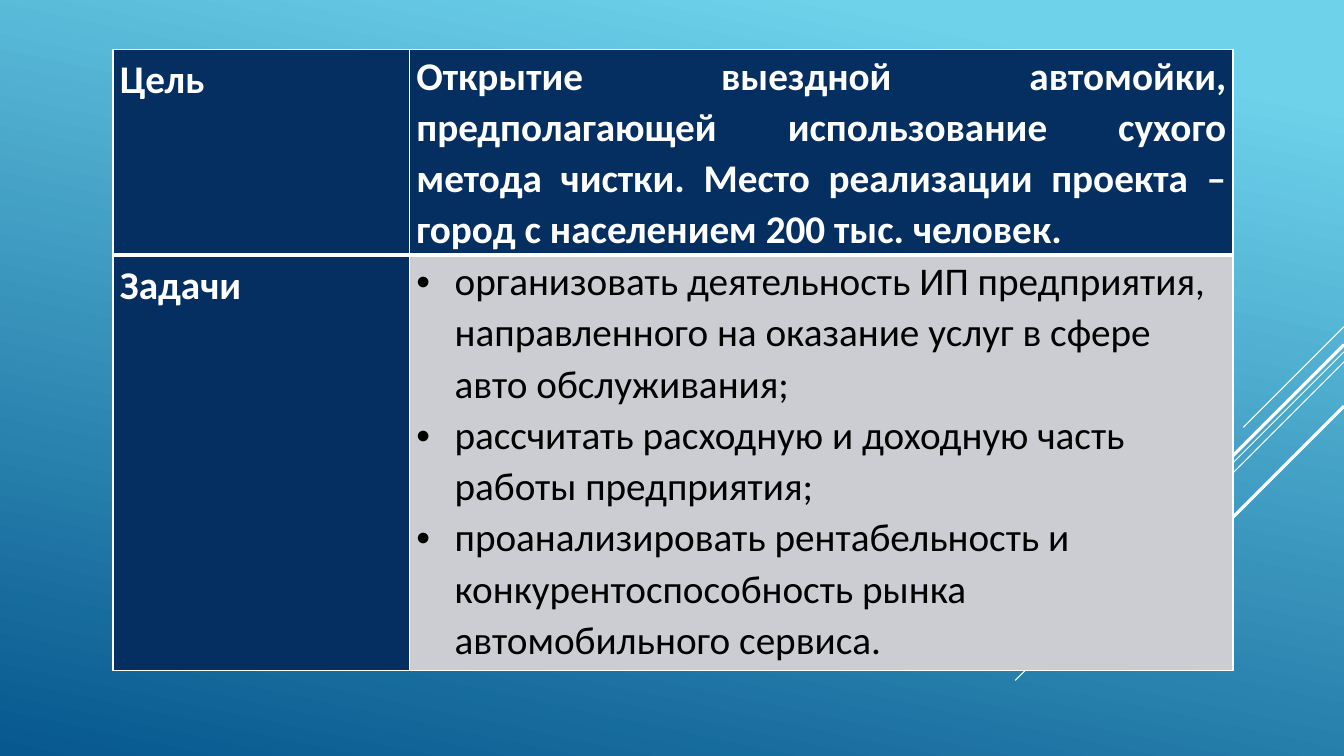
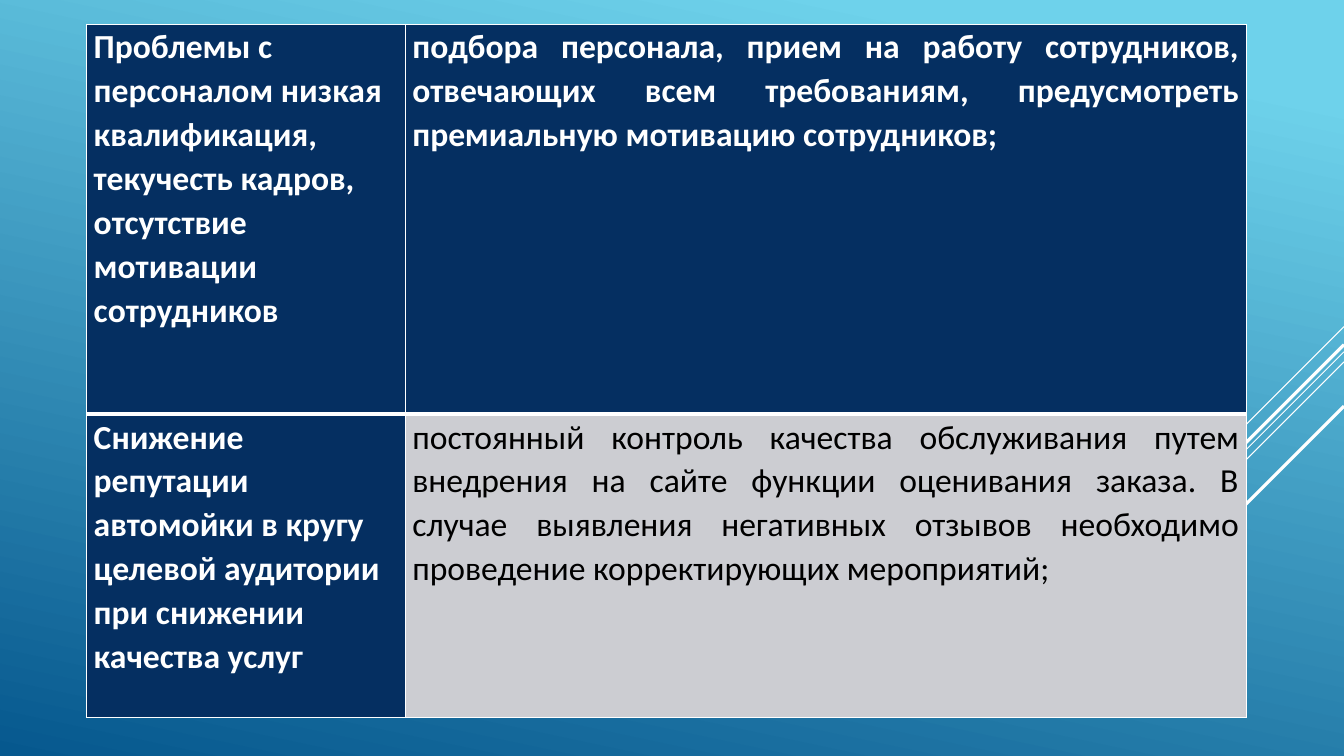
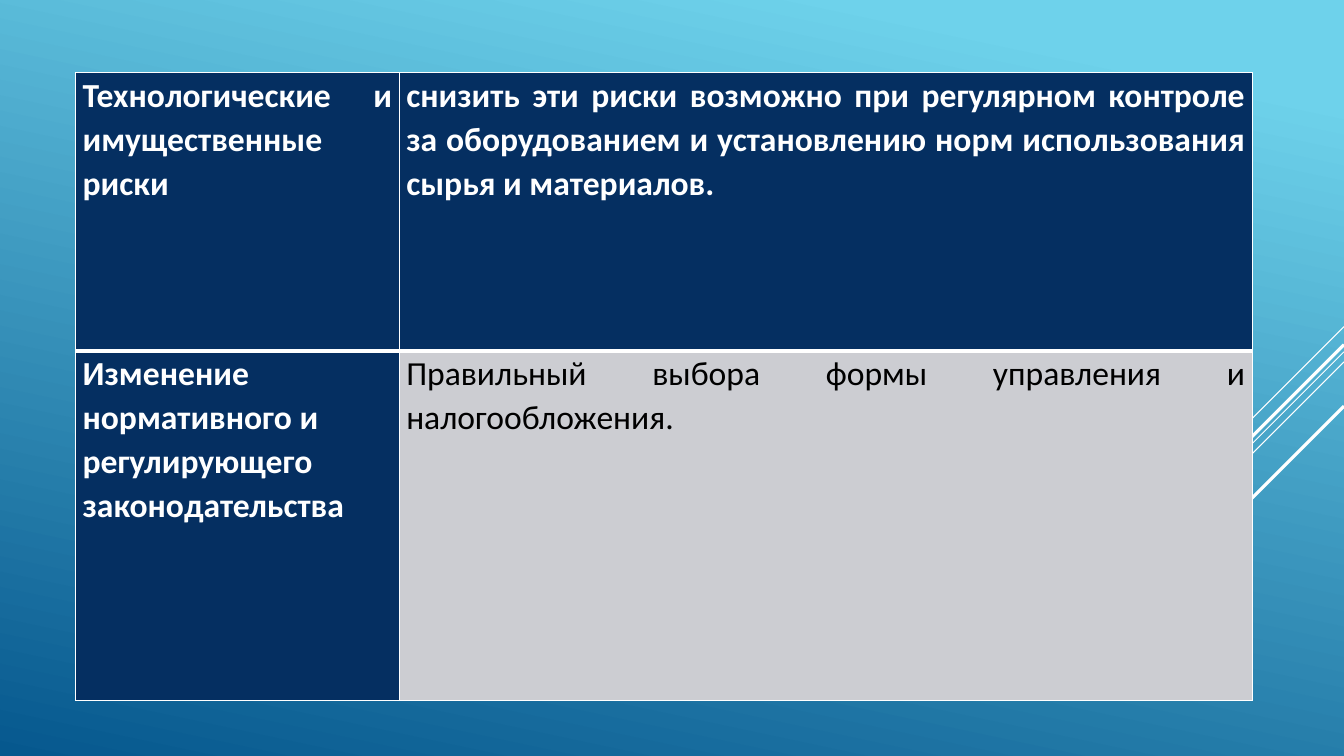
"""Build three slides of two-column project tables on a shared ray background."""
import lxml.etree
import pptx
import pptx.dml.color
import pptx.enum.shapes
import pptx.enum.text
import pptx.oxml.ns
import pptx.util

Inches = pptx.util.Inches
Pt = pptx.util.Pt
qualified = pptx.oxml.ns.qn
JUSTIFY = pptx.enum.text.PP_ALIGN.JUSTIFY
LEFT = pptx.enum.text.PP_ALIGN.LEFT

COLORS = {
    "sky": "6ED2EB",
    "deep": "06588E",
    "navy": "052F61",
    "gray": "CCCDD2",
    "white": "FFFFFF",
    "black": "000000",
}
FONT = "Calibri"
SLIDE_WIDTH, SLIDE_HEIGHT = 13.33, 7.5
BULLET_INDENT = 0.38
RAYS = [(3.24, 1, 0.75), (3.49, 3.26, 0.75), (3.59, 2.07, 0.75), (3.42, 1.91, 2.25), (4.03, 1.39, 2.25)]

TABLES = [
    {
        "box": (1.12, 0.49), "columns": (2.94, 8.17), "rows": (2.04, 4.12), "size": 28,
        "cells": [
            [
                {"text": ["Цель"], "spacing": 1.15},
                {"text": ["Открытие выездной автомойки, предполагающей использование сухого метода чистки. "
                          "Место реализации проекта – город с населением 200 тыс. человек."]},
            ],
            [
                {"text": ["Задачи"], "spacing": 1.15},
                {"text": ["организовать деятельность ИП предприятия, направленного на оказание услуг "
                          "в сфере авто обслуживания;",
                          "рассчитать расходную и доходную часть работы предприятия;",
                          "проанализировать рентабельность и конкурентоспособность рынка "
                          "автомобильного сервиса."],
                 "align": LEFT, "bullets": True},
            ],
        ],
    },
    {
        "box": (0.86, 0.24), "columns": (3.16, 8.34), "rows": (3.87, 3.01), "size": 24,
        "cells": [
            [
                {"text": ["Проблемы с персоналом низкая квалификация, текучесть кадров, "
                          "отсутствие мотивации сотрудников"], "align": LEFT},
                {"text": ["подбора персонала, прием на работу сотрудников, отвечающих всем требованиям, "
                          "предусмотреть премиальную мотивацию сотрудников;"]},
            ],
            [
                {"text": ["Снижение репутации автомойки в кругу целевой аудитории "
                          "при снижении качества услуг"], "align": LEFT},
                {"text": ["постоянный контроль качества обслуживания путем внедрения на сайте функции "
                          "оценивания заказа. В случае выявления негативных отзывов необходимо "
                          "проведение корректирующих мероприятий;"]},
            ],
        ],
    },
    {
        "box": (0.75, 0.72), "columns": (3.21, 8.46), "rows": (2.76, 3.47), "size": 24,
        "cells": [
            [
                {"text": ["Технологические и имущественные риски"]},
                {"text": ["снизить эти риски возможно при регулярном контроле за оборудованием "
                          "и установлению норм использования сырья и материалов."]},
            ],
            [
                {"text": ["Изменение нормативного и регулирующего законодательства"], "align": LEFT},
                {"text": ["Правильный выбора формы управления и налогообложения."]},
            ],
        ],
    },
]


def color(name):
    """Return the named palette colour."""
    return pptx.dml.color.RGBColor.from_string(COLORS[name])


def style_master(presentation, slide):
    """Give the master its gradient and move rays drawn on the slide onto it."""
    master = presentation.slide_master
    fill = master.background.fill
    fill.gradient()
    fill.gradient_angle = 360 - 102
    for stop, name, position in zip(fill.gradient_stops, ("sky", "deep"), (0.1, 1)):
        stop.color.rgb = color(name)
        stop.position = position
    for top, reach, width in RAYS:
        ray = slide.shapes.add_connector(
            pptx.enum.shapes.MSO_CONNECTOR.STRAIGHT,
            Inches(SLIDE_WIDTH), Inches(top), Inches(SLIDE_WIDTH - reach), Inches(top + reach))
        ray.line.color.rgb = color("white")
        ray.line.width = Pt(width)
        lxml.etree.SubElement(ray.element.spPr, qualified("a:effectLst"))
        master.shapes.element.append(ray.element)


def add_borders(cell, widths):
    """Draw white cell borders with widths for left, right, top and bottom."""
    properties = cell._tc.get_or_add_tcPr()
    for side, width in zip("LRTB", widths):
        line = lxml.etree.SubElement(properties, qualified(f"a:ln{side}"), w=str(Pt(width)))
        fill = lxml.etree.SubElement(line, qualified("a:solidFill"))
        lxml.etree.SubElement(fill, qualified("a:srgbClr"), val=COLORS["white"])


def add_bullet(paragraph):
    """Give the paragraph a round bullet with a hanging indent."""
    properties = paragraph._p.get_or_add_pPr()
    properties.set("marL", str(Inches(BULLET_INDENT)))
    properties.set("indent", str(-Inches(BULLET_INDENT)))
    lxml.etree.SubElement(properties, qualified("a:buFont"), typeface="Arial")
    lxml.etree.SubElement(properties, qualified("a:buChar"), char="•")


def fill_cell(cell, content, size, is_heading):
    """Fill the cell and write its paragraphs."""
    cell.margin_left = cell.margin_right = Inches(0.07)
    cell.margin_top = cell.margin_bottom = 0
    cell.fill.solid()
    cell.fill.fore_color.rgb = color("navy" if is_heading else "gray")
    frame = cell.text_frame
    bulleted = content.get("bullets", False)
    last = len(content["text"]) - 1
    for index, text in enumerate(content["text"]):
        paragraph = frame.add_paragraph() if index else frame.paragraphs[0]
        paragraph.alignment = content.get("align", JUSTIFY)
        paragraph.line_spacing = content.get("spacing", 1.07)
        paragraph.space_after = Pt(8 if index == last else 0)
        if bulleted:
            add_bullet(paragraph)
        run = paragraph.add_run()
        run.text = text
        run.font.name = FONT
        run.font.size = Pt(size)
        run.font.bold = is_heading
        run.font.color.rgb = color("white" if is_heading else "black")


def add_project_table(slide, box, columns, rows, size, cells):
    """Place a table with a navy first row and first column at the box corner."""
    left, top = box
    table = slide.shapes.add_table(
        len(rows), len(columns), Inches(left), Inches(top),
        Inches(sum(columns)), Inches(sum(rows))).table
    table.horz_banding = False
    for column, width in zip(table.columns, columns):
        column.width = Inches(width)
    for row_index, height in enumerate(rows):
        table.rows[row_index].height = Inches(height)
        edges = (1, 1, 1, 3) if row_index == 0 else (1, 1, 3, 1)
        for column_index, content in enumerate(cells[row_index]):
            cell = table.cell(row_index, column_index)
            add_borders(cell, edges)
            fill_cell(cell, content, size, row_index == 0 or column_index == 0)


def main():
    """Build and save the presentation."""
    presentation = pptx.Presentation()
    presentation.slide_width = Inches(SLIDE_WIDTH)
    presentation.slide_height = Inches(SLIDE_HEIGHT)
    blank = presentation.slide_layouts[6]
    slides = [presentation.slides.add_slide(blank) for _ in TABLES]
    style_master(presentation, slides[0])
    for slide, table in zip(slides, TABLES):
        add_project_table(slide, **table)
    presentation.save("out.pptx")


if __name__ == "__main__":
    main()
